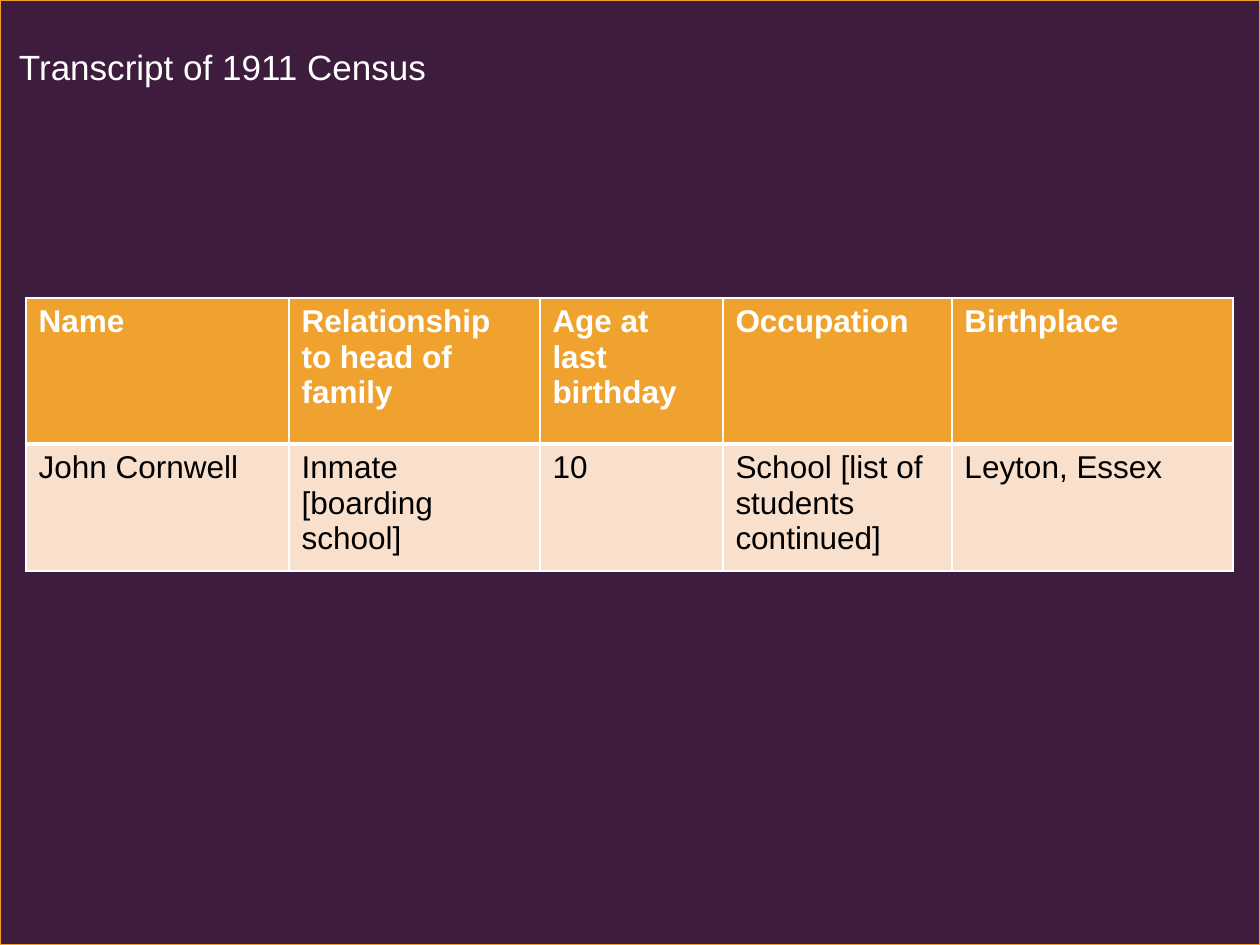
import pptx
import pptx.dml.color
import pptx.enum.shapes
import pptx.enum.text
import pptx.oxml
import pptx.oxml.ns
import pptx.util
from dataclasses import dataclass

PX = 914400 / 126


@dataclass(frozen=True)
class Theme:
    font: str = "Arial"
    title_size: int = 20
    table_size: int = 18
    plum: str = "3D1C3D"
    frame: str = "EF9F28"
    header: str = "F0A22E"
    body: str = "F9E0CD"
    white: str = "FFFFFF"
    black: str = "000000"


theme = Theme()
rgb = pptx.dml.color.RGBColor.from_string


def px(count):
    return pptx.util.Emu(round(count * PX))


def write(text_frame, text, *, size, color, bold=False):
    run = text_frame.paragraphs[0].add_run()
    run.text = text
    run.font.name = theme.font
    run.font.size = pptx.util.Pt(size)
    run.font.bold = bold
    run.font.color.rgb = rgb(color)


prs = pptx.Presentation()
prs.slide_width, prs.slide_height = px(1260), px(945)
slide = prs.slides.add_slide(prs.slide_layouts[6])

backdrop = slide.shapes.add_shape(
    pptx.enum.shapes.MSO_SHAPE.RECTANGLE, 0, 0, px(1260), px(945))
backdrop.shadow.inherit = False
backdrop.fill.solid()
backdrop.fill.fore_color.rgb = rgb(theme.plum)
backdrop.line.color.rgb = rgb(theme.frame)
backdrop.line.width = pptx.util.Pt(0.75)

title = slide.shapes.add_textbox(px(6), px(8), px(436), px(171)).text_frame
title.word_wrap = False
title.vertical_anchor = pptx.enum.text.MSO_ANCHOR.TOP
title.margin_left = title.margin_right = px(13)
title.margin_top, title.margin_bottom = px(42), px(10)
write(title, "Transcript of 1911 Census", size=theme.title_size, color=theme.white)

census_rows = [
    ["Name", "Relationship to head of family", "Age at last birthday",
     "Occupation", "Birthplace"],
    ["John Cornwell", "Inmate [boarding school]", "10",
     "School [list of students continued]", "Leyton, Essex"],
]
column_widths = [263, 251, 183, 229, 281]
row_heights = [146, 127]
row_styles = [
    {"fill": theme.header, "text": theme.white, "bold": True,
     "borders": {"lnL": 1, "lnR": 1, "lnT": 1, "lnB": 3}},
    {"fill": theme.body, "text": theme.black, "bold": False,
     "borders": {"lnL": 1, "lnR": 1, "lnT": 3, "lnB": 1}},
]

census = slide.shapes.add_table(
    len(row_heights), len(column_widths), px(26), px(298),
    px(sum(column_widths)), px(sum(row_heights))).table
for column, width in zip(census.columns, column_widths):
    column.width = px(width)
for row, height, entries, style in zip(census.rows, row_heights, census_rows, row_styles):
    row.height = px(height)
    for cell, entry in zip(row.cells, entries):
        cell_properties = cell._tc.get_or_add_tcPr()
        for side, points in style["borders"].items():
            cell_properties.append(pptx.oxml.parse_xml(
                f'<a:{side} {pptx.oxml.ns.nsdecls("a")} w="{pptx.util.Pt(points)}">'
                f'<a:solidFill><a:srgbClr val="{theme.white}"/></a:solidFill></a:{side}>'))
        cell.fill.solid()
        cell.fill.fore_color.rgb = rgb(style["fill"])
        write(cell.text_frame, entry, size=theme.table_size,
              color=style["text"], bold=style["bold"])

prs.save("out.pptx")
